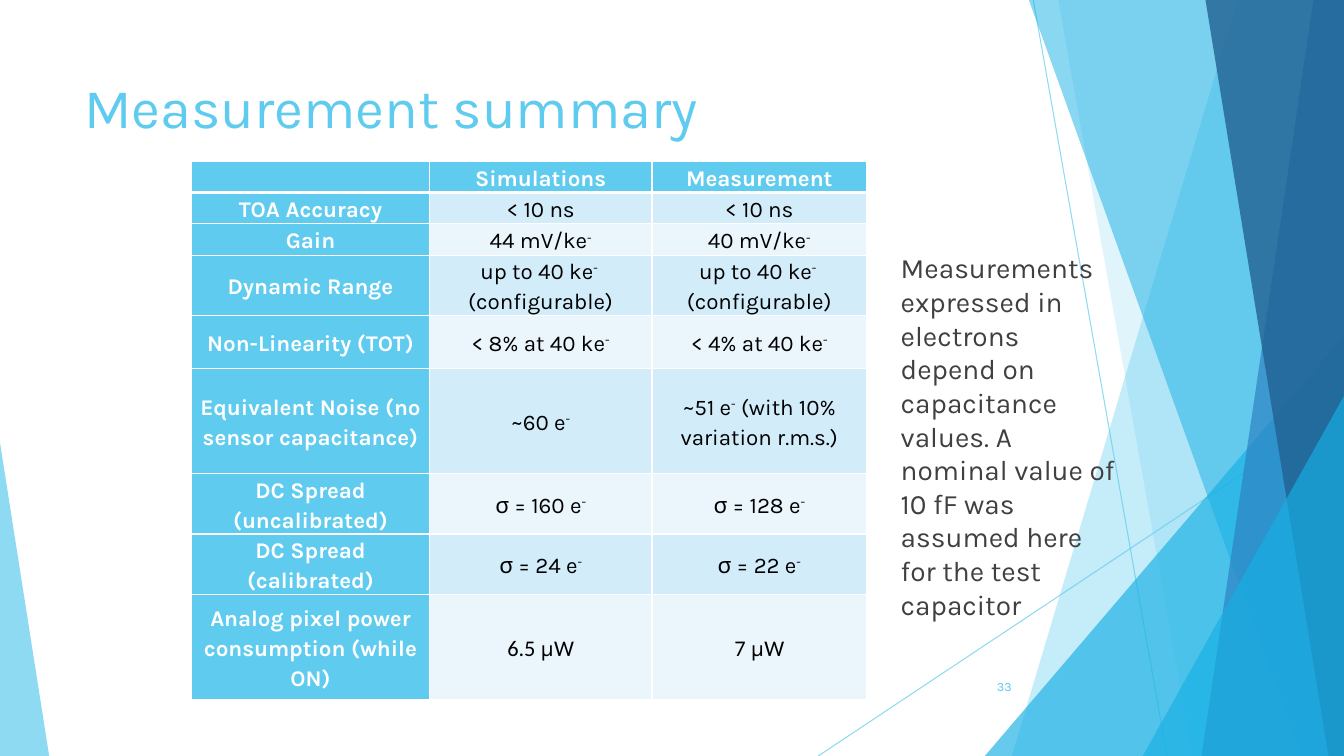
"""Build the measurement summary slide."""
from dataclasses import dataclass

from lxml import etree
from pptx import Presentation, util as u
from pptx.dml.color import RGBColor
from pptx.enum import shapes, text
from pptx.oxml.ns import qn


@dataclass(frozen=True)
class Theme:
    sky: str = "5FCBEF"
    cyan: str = "17B0E4"
    blue: str = "2E83C3"
    navy: str = "226292"
    white: str = "FFFFFF"
    black: str = "000000"
    grey: str = "404040"
    stripes: tuple[str, str] = ("D2ECF9", "EAF6FC")
    font: str = "Karla"
    unit_font: str = "Calibri"
    title_size: int = 40
    body_size: int = 20
    table_size: int = 16
    number_size: int = 9


THEME = Theme()
WIDTH, HEIGHT = 33.87, 19.05


@dataclass(frozen=True)
class Band:
    top_x: float
    bottom_x: float
    colour: str
    opacity: int


@dataclass(frozen=True)
class Triangle:
    left: float
    top: float
    width: float
    apex: int
    colour: str
    opacity: int


@dataclass(frozen=True)
class Line:
    start: tuple[float, float]
    end: tuple[float, float]


@dataclass(frozen=True)
class Label:
    words: str
    frame: tuple[float, float, float, float]
    size: int
    colour: str
    align: text.PP_ALIGN = text.PP_ALIGN.LEFT
    anchor: text.MSO_ANCHOR = text.MSO_ANCHOR.TOP


@dataclass(frozen=True)
class Span:
    words: str
    raised: bool = False
    font: str = THEME.font


@dataclass(frozen=True)
class Row:
    height: float
    cells: tuple[list[Span], ...]


def charge(value: str, sign: str = "-", after: str = "") -> list[Span]:
    """Return a value in electrons with a raised minus sign."""
    spans = [Span(value), Span(sign, raised=True)]
    return spans + [Span(after)] if after else spans


def power(value: str) -> list[Span]:
    """Return a value in microwatts."""
    return [Span(value, font=THEME.unit_font), Span("μ"), Span("W", font=THEME.unit_font)]


LINES = [Line((26.04, 0), (29.41, HEIGHT)), Line((WIDTH, 10.24), (20.62, HEIGHT))]
FACETS = [
    Band(31.19, 25.5, THEME.sky, 36),
    Band(26.67, 30.05, THEME.sky, 20),
    Triangle(24.82, 8.46, WIDTH - 24.82, 1, THEME.cyan, 66),
    Band(25.93, 32.79, THEME.cyan, 50),
    Band(33.1, 30.28, THEME.blue, 70),
    Band(30.38, 33.48, THEME.navy, 80),
    Triangle(28.8, 9.98, WIDTH - 28.8, 1, THEME.cyan, 66),
    Triangle(0, 11.15, 1.24, 0, THEME.sky, 70),
]
LABELS = [
    Label("Measurement summary", (1.88, 1.7, 23.88, 4.3), THEME.title_size, THEME.sky),
    Label("33", (23.85, 16.79, 1.9, 1.02), THEME.number_size, THEME.sky,
          text.PP_ALIGN.RIGHT, text.MSO_ANCHOR.MIDDLE),
    Label("Measurements expressed in electrons depend on capacitance values. "
          "A nominal value of 10 fF was assumed here for the test capacitor",
          (22.45, 6.2, 5.97, 8.2), THEME.body_size, THEME.grey),
]
COLUMNS = (5.99, 5.61, 5.41)
LOW, MEDIUM, TALL = 0.79, 1.33, 2.66
RANGE = charge("up to 40 ke", "- ", " (configurable)")
ROWS = [
    Row(LOW, ([], [Span("Simulations")], [Span("Measurement")])),
    Row(LOW, ([Span("TOA Accuracy")], [Span("< 10 ns")], [Span("< 10 ns")])),
    Row(LOW, ([Span("Gain")], charge("44 mV/ke"), charge("40 mV/ke"))),
    Row(MEDIUM, ([Span("Dynamic Range")], RANGE, RANGE)),
    Row(MEDIUM, ([Span("Non-Linearity (TOT)")], charge("< 8% at 40 ke"), charge("< 4% at 40 ke"))),
    Row(TALL, ([Span("Equivalent Noise (no sensor capacitance)")], charge("~60 e"),
               charge("~51 e", after=" (with 10% variation r.m.s.)"))),
    Row(MEDIUM, ([Span("DC Spread (uncalibrated)")], charge("σ = 160 e"), charge("σ = 128 e"))),
    Row(MEDIUM, ([Span("DC Spread (calibrated)")], charge("σ = 24 e"), charge("σ = 22 e"))),
    Row(TALL, ([Span("Analog pixel power consumption (while ON)")], power("6.5 "), power("7 "))),
]


def rgb(colour: str) -> RGBColor:
    """Return a colour object."""
    return RGBColor.from_string(colour)


def set_opacity(shape, percent: int) -> None:
    """Make the first colour of a shape translucent."""
    colour = shape.element.spPr.find(".//" + qn("a:srgbClr"))
    etree.SubElement(colour, qn("a:alpha")).set("val", str(percent * 1000))


def draw_line(page, line: Line) -> None:
    """Draw a thin translucent line."""
    points = [u.Cm(value) for value in line.start + line.end]
    connector = page.shapes.add_connector(shapes.MSO_CONNECTOR.STRAIGHT, *points)
    connector.line.color.rgb = rgb(THEME.sky)
    connector.line.width = u.Pt(0.75)
    set_opacity(connector, 70)
    etree.SubElement(connector.element.spPr, qn("a:effectLst"))


def draw_facet(page, facet: Band | Triangle) -> None:
    """Draw one translucent background facet."""
    if isinstance(facet, Band):
        builder = page.shapes.build_freeform(u.Cm(facet.top_x), 0)
        corners = [(WIDTH, 0), (WIDTH, HEIGHT), (facet.bottom_x, HEIGHT)]
        builder.add_line_segments([(u.Cm(x), u.Cm(y)) for x, y in corners])
        shape = builder.convert_to_shape()
    else:
        frame = (facet.left, facet.top, facet.width, HEIGHT - facet.top)
        shape = page.shapes.add_shape(
            shapes.MSO_SHAPE.ISOSCELES_TRIANGLE, *(u.Cm(value) for value in frame))
        shape.adjustments[0] = facet.apex
    shape.fill.solid()
    shape.fill.fore_color.rgb = rgb(facet.colour)
    shape.line.fill.background()
    shape.shadow.inherit = False
    set_opacity(shape, facet.opacity)


def style_font(font, size: int, colour: str, name: str = THEME.font) -> None:
    """Set size, colour and typeface."""
    font.size, font.name = u.Pt(size), name
    font.color.rgb = rgb(colour)


def draw_label(page, label: Label) -> None:
    """Draw a wrapped text box."""
    box = page.shapes.add_textbox(*(u.Cm(value) for value in label.frame))
    frame = box.text_frame
    frame.text, frame.word_wrap, frame.vertical_anchor = label.words, True, label.anchor
    para = frame.paragraphs[0]
    para.alignment = label.align
    style_font(para.runs[0].font, label.size, label.colour)


def set_borders(cell, bottom: int) -> None:
    """Give a cell white borders."""
    properties = cell._tc.get_or_add_tcPr()
    for side, points in {"lnL": 1, "lnR": 1, "lnT": 1, "lnB": bottom}.items():
        border = etree.SubElement(properties, qn(f"a:{side}"), w=str(u.Pt(points)))
        fill = etree.SubElement(border, qn("a:solidFill"))
        etree.SubElement(fill, qn("a:srgbClr"), val=THEME.white)


def fill_cell(cell, spans: list[Span], heading: bool, fill: str, bottom: int) -> None:
    """Write and format one table cell."""
    set_borders(cell, bottom)
    cell.fill.solid()
    cell.fill.fore_color.rgb = rgb(fill)
    cell.margin_left = cell.margin_right = u.Cm(0.17)
    cell.margin_top = cell.margin_bottom = 0
    cell.vertical_anchor = text.MSO_ANCHOR.MIDDLE
    para = cell.text_frame.paragraphs[0]
    if spans:
        para.alignment, para.line_spacing = text.PP_ALIGN.CENTER, 1.15
    for span in spans:
        run = para.add_run()
        run.text = span.words
        style_font(run.font, THEME.table_size, THEME.white if heading else THEME.black, span.font)
        run.font.bold = heading
        if span.raised:
            run._r.get_or_add_rPr().set("baseline", "30000")


def draw_table(page) -> None:
    """Draw the table of simulated and measured values."""
    frame = (4.83, 4.06, sum(COLUMNS), sum(row.height for row in ROWS))
    table = page.shapes.add_table(len(ROWS), len(COLUMNS), *(u.Cm(value) for value in frame)).table
    table.horz_banding = False
    for column, width in zip(table.columns, COLUMNS):
        column.width = u.Cm(width)
    for index, row in enumerate(ROWS):
        table.rows[index].height = u.Cm(row.height)
        for position, spans in enumerate(row.cells):
            heading = index == 0 or position == 0
            fill = THEME.sky if heading else THEME.stripes[(index - 1) % 2]
            fill_cell(table.cell(index, position), spans, heading, fill, 1 if index else 3)


def main() -> None:
    """Build and save the deck."""
    deck = Presentation()
    deck.slide_width, deck.slide_height = u.Cm(WIDTH), u.Cm(HEIGHT)
    page = deck.slides.add_slide(deck.slide_layouts[6])
    for line in LINES:
        draw_line(page, line)
    for facet in FACETS:
        draw_facet(page, facet)
    draw_table(page)
    for label in LABELS:
        draw_label(page, label)
    deck.save("out.pptx")


if __name__ == "__main__":
    main()
